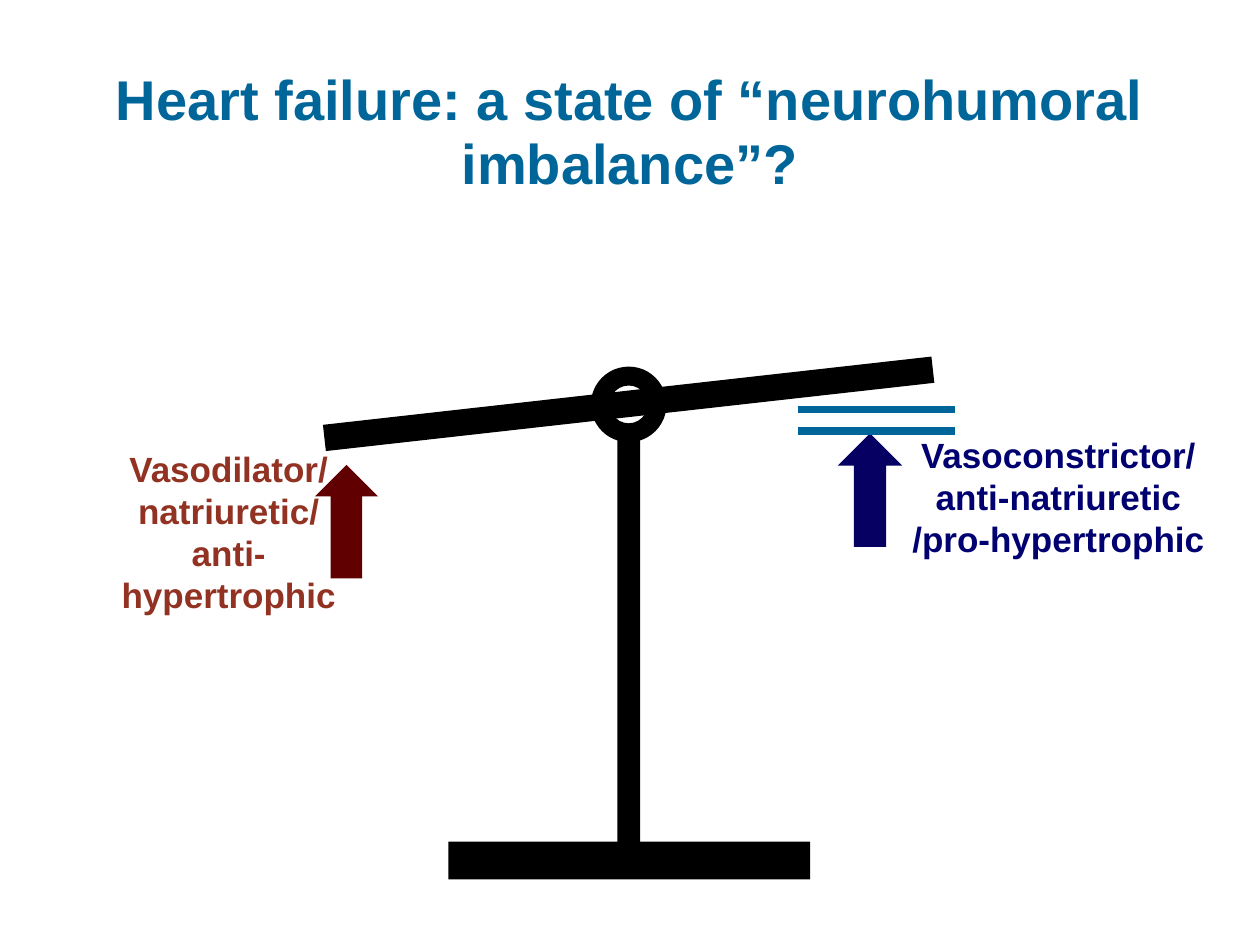
from dataclasses import dataclass

import pptx
import pptx.dml.color
import pptx.enum.shapes
import pptx.enum.text
import pptx.oxml.ns
import pptx.util
from lxml import etree

SHAPE = pptx.enum.shapes.MSO_SHAPE
WIDTH, HEIGHT = 10, 7.5
COLOURS = {
    "beam": "000000",
    "title": "006699",
    "dilator_arrow": "610000",
    "dilator_label": "923222",
    "constrictor_arrow": "050061",
    "constrictor_label": "000070",
}


@dataclass(frozen=True)
class Box:
    """A frame given as shares of the slide's width and height."""
    left: float
    top: float
    width: float
    height: float

    def emu(self) -> tuple[int, ...]:
        sizes = (WIDTH, HEIGHT, WIDTH, HEIGHT)
        shares = (self.left, self.top, self.width, self.height)
        return tuple(int(pptx.util.Inches(a * b)) for a, b in zip(shares, sizes))


@dataclass(frozen=True)
class Part:
    kind: int
    box: Box
    colour: str
    rotation: float = 0


def inches(left: float, top: float, width: float, height: float) -> Box:
    return Box(left / WIDTH, top / HEIGHT, width / WIDTH, height / HEIGHT)


def rgb(name: str) -> pptx.dml.color.RGBColor:
    return pptx.dml.color.RGBColor.from_string(COLOURS[name])


def draw_part(slide, part: Part) -> None:
    shape = slide.shapes.add_shape(part.kind, *part.box.emu())
    shape.shadow.inherit = False
    shape.fill.solid()
    shape.fill.fore_color.rgb = rgb(part.colour)
    shape.line.fill.background()
    shape.rotation = part.rotation


def draw_bar(slide, left: float, right: float, y: float) -> None:
    start, level, end = (pptx.util.Inches(v) for v in (left, y, right))
    bar = slide.shapes.add_connector(
        pptx.enum.shapes.MSO_CONNECTOR.STRAIGHT, start, level, end, level)
    bar.line.color.rgb = rgb("title")
    bar.line.width = pptx.util.Pt(4.5)
    etree.SubElement(bar._element.spPr, pptx.oxml.ns.qn("a:effectLst"))


def add_text(slide, text: str, *, box: Box, colour: str, size: float = 20,
             wrap: bool = True, spacing: float | None = None) -> None:
    frame = slide.shapes.add_textbox(*box.emu()).text_frame
    frame.word_wrap = wrap
    frame.text = text
    for paragraph in frame.paragraphs:
        paragraph.alignment = pptx.enum.text.PP_ALIGN.CENTER
        if spacing:
            paragraph.line_spacing = spacing
        font = paragraph.runs[0].font
        font.name = "Arial"
        font.size = pptx.util.Pt(size)
        font.bold = True
        font.color.rgb = rgb(colour)


# Balance scale and the arrows that push it
PARTS = [
    Part(SHAPE.RECTANGLE, inches(2.56, 3.1, 4.86, 0.21), "beam", 353.6),
    Part(SHAPE.DONUT, inches(4.69, 2.91, 0.6, 0.6), "beam"),
    Part(SHAPE.RECTANGLE, inches(4.9, 3.45, 0.18, 3.26), "beam"),
    Part(SHAPE.RECTANGLE, inches(3.56, 6.68, 2.87, 0.3), "beam"),
    Part(SHAPE.UP_ARROW, inches(2.5, 3.69, 0.5, 0.9), "dilator_arrow"),
    Part(SHAPE.UP_ARROW, inches(6.65, 3.44, 0.51, 0.9), "constrictor_arrow"),
]


def main() -> None:
    deck = pptx.Presentation()
    deck.slide_width = pptx.util.Inches(WIDTH)
    deck.slide_height = pptx.util.Inches(HEIGHT)
    slide = deck.slides.add_slide(deck.slide_layouts[6])

    add_text(slide, "Heart failure: a state of “neurohumoral imbalance”?",
             box=inches(0.77, 0.5, 8.46, 0.67), colour="title", size=32,
             spacing=0.95)
    for part in PARTS:
        draw_part(slide, part)

    # Labels and the two bars above the right arrow
    add_text(slide, "Vasoconstrictor/\nanti-natriuretic\n/pro-hypertrophic",
             box=inches(7.09, 3.39, 2.62, 1.11), colour="constrictor_label",
             wrap=False)
    for y in (3.25, 3.42):
        draw_bar(slide, 6.33, 7.58, y)
    add_text(slide, "Vasodilator/\nnatriuretic/\nanti-hypertrophic",
             box=inches(0.67, 3.5, 2.29, 1.45), colour="dilator_label")

    deck.save("out.pptx")


if __name__ == "__main__":
    main()
